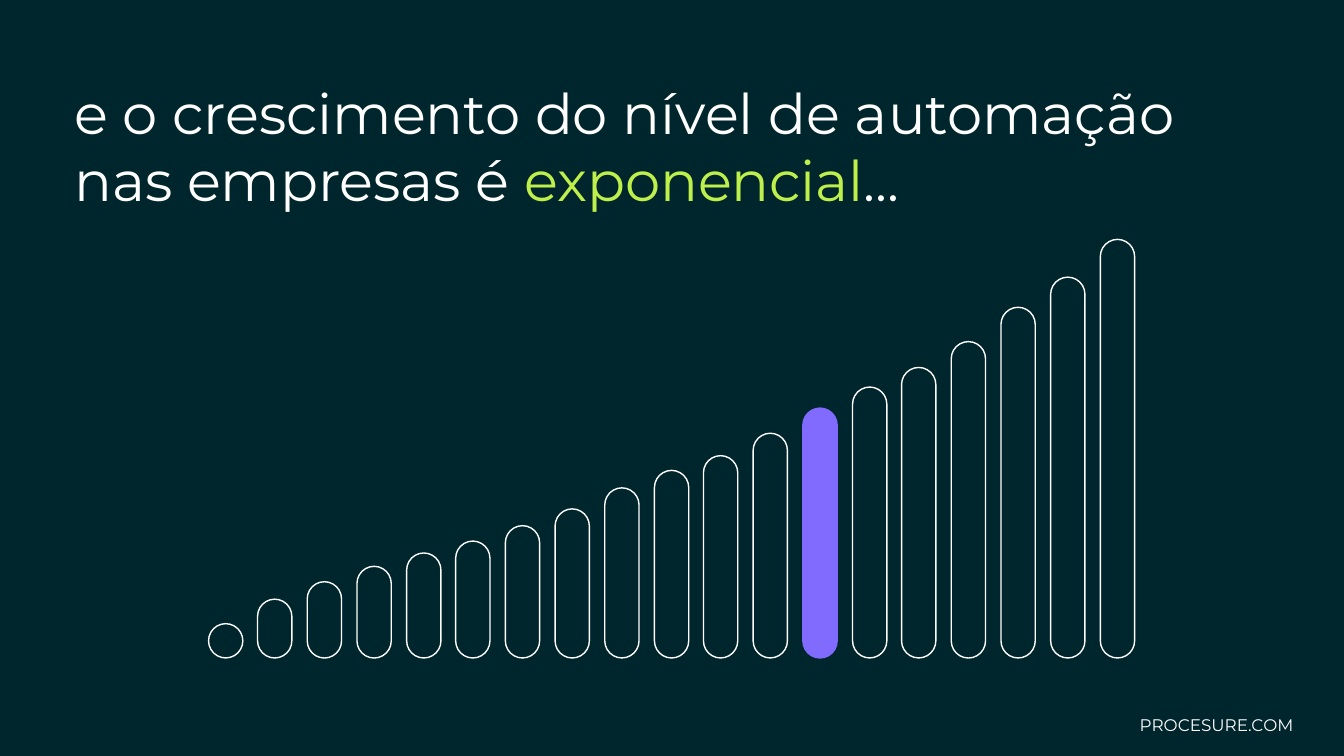
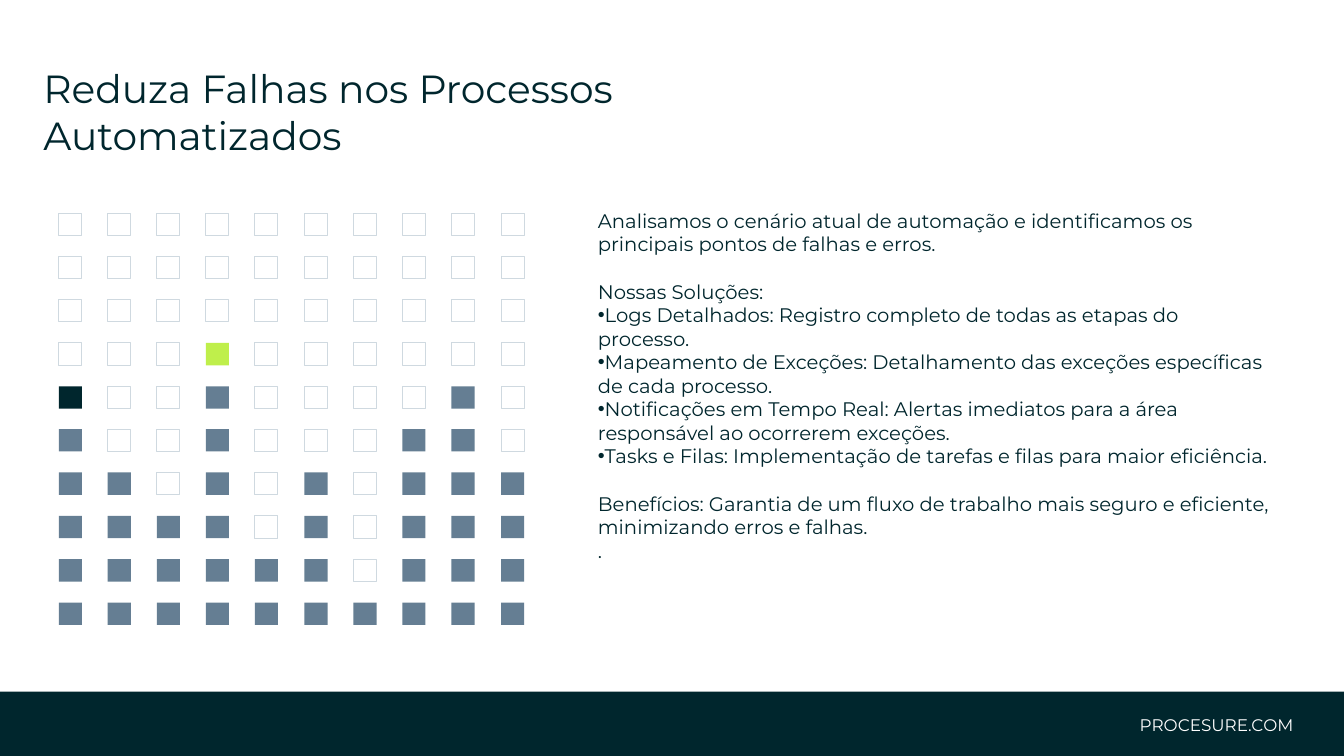
"""Build two slides on the growth of automation and on fewer process failures."""
from dataclasses import dataclass

from lxml import etree
from pptx import Presentation
from pptx import util as u
from pptx.dml import color
from pptx.enum import shapes, text
from pptx.oxml import ns

PX = 6350


@dataclass(frozen=True)
class Theme:
    face: str = "Montserrat"
    dark: str = "00262D"
    white: str = "FFFFFF"
    lime: str = "BFEF4B"
    violet: str = "816BFF"
    slate: str = "657E93"
    pale: str = "CFD9E0"
    hero: int = 40
    head: int = 28
    body: int = 14
    foot: int = 12


theme = Theme()


def draw(slide, kind, area, fill=None, line=None, width=1):
    shape = slide.shapes.add_shape(kind, *(n * PX for n in area))
    shape.shadow.inherit = False
    for part, tint in ((shape.fill, fill), (shape.line.fill, line)):
        if tint:
            part.solid()
            part.fore_color.rgb = color.RGBColor.from_string(tint)
        else:
            part.background()
    if line:
        shape.line.width = u.Pt(width)
    return shape


def write(slide, area, paras, size, tint, frame, align=None):
    block = slide.shapes.add_textbox(*(n * PX for n in area)).text_frame
    for key, val in {"word_wrap": True, **frame}.items():
        setattr(block, key, val)
    for i, runs in enumerate(paras):
        par = block.add_paragraph() if i else block.paragraphs[0]
        par.alignment = align
        for words, shade in runs:
            run = par.add_run()
            run.text = words
            for key, val in {"name": theme.face, "size": u.Pt(size)}.items():
                setattr(run.font, key, val)
            run.font.color.rgb = color.RGBColor.from_string(shade or tint)
    return block


deck = Presentation()
deck.slide_width, deck.slide_height = 1920 * PX, 1080 * PX
rect, pill = shapes.MSO_SHAPE.RECTANGLE, shapes.MSO_SHAPE.ROUNDED_RECTANGLE
low = {"vertical_anchor": text.MSO_ANCHOR.BOTTOM}
low |= {f"margin_{side}": 14 * PX for side in ("left", "top", "right", "bottom")}

pages = [
    (0, (92, 98, 1727, 220), theme.hero, theme.white,
     [("e o crescimento do nível de automação nas empresas é ", None),
      ("exponencial", theme.lime), ("...", None)]),
    (988, (48, 66, 1123, 174), theme.head, theme.dark,
     [("Reduza Falhas nos Processos Automatizados", None)]),
]
for top, area, size, tint, title in pages:
    slide = deck.slides.add_slide(deck.slide_layouts[6])
    draw(slide, rect, (0, top, 1920, 1080 - top), theme.dark)
    write(slide, area, [title], size, tint, low)
    write(slide, (1570, 998, 336, 66), [[("PROCESURE.COM", None)]],
          theme.foot, theme.white, low, text.PP_ALIGN.CENTER)
growth, faults = deck.slides

bars = [49, 84, 109, 131, 150, 167, 189, 213, 243, 268,
        289, 321, 357, 387, 415, 452, 501, 544, 598]
for i, high in enumerate(bars):
    fill = theme.violet if i == 12 else None
    bar = draw(growth, pill, (298 + 1274 * i // 18, 940 - high, 49, high),
               fill, fill or theme.white)
    bar.adjustments[0] = 0.5

counts = [6, 4, 3, 7, 2, 4, 1, 5, 6, 4]
peaks = {0: theme.dark, 3: theme.lime}
for col, count in enumerate(counts):
    for row in range(10):
        area = (84 + 632 * col // 9, 305 + 556 * row // 9, 33, 32)
        first = 10 - count
        if row < first:
            draw(faults, rect, area, line=theme.pale, width=0.75)
        else:
            peak = peaks.get(col, theme.slate)
            draw(faults, rect, area, peak if row == first else theme.slate)

lines = [
    "Analisamos o cenário atual de automação e identificamos os principais pontos de falhas e erros.",
    "Nossas Soluções:",
    "Logs Detalhados: Registro completo de todas as etapas do processo.",
    "Mapeamento de Exceções: Detalhamento das exceções específicas de cada processo.",
    "Notificações em Tempo Real: Alertas imediatos para a área responsável ao ocorrerem exceções.",
    "Tasks e Filas: Implementação de tarefas e filas para maior eficiência.",
    "Benefícios: Garantia de um fluxo de trabalho mais seguro e eficiente, minimizando erros e falhas.",
    ".",
]
block = write(faults, (840, 291, 996, 524), [[(line, None)] for line in lines],
              theme.body, theme.dark, {"auto_size": text.MSO_AUTO_SIZE.SHAPE_TO_FIT_TEXT})
for i in (1, 6):
    block.paragraphs[i].space_before = u.Pt(17)
for par in block.paragraphs[2:6]:
    props = par._p.get_or_add_pPr()
    etree.SubElement(props, ns.qn("a:buFont"), typeface="Arial")
    etree.SubElement(props, ns.qn("a:buChar"), char="•")

deck.save("out.pptx")
